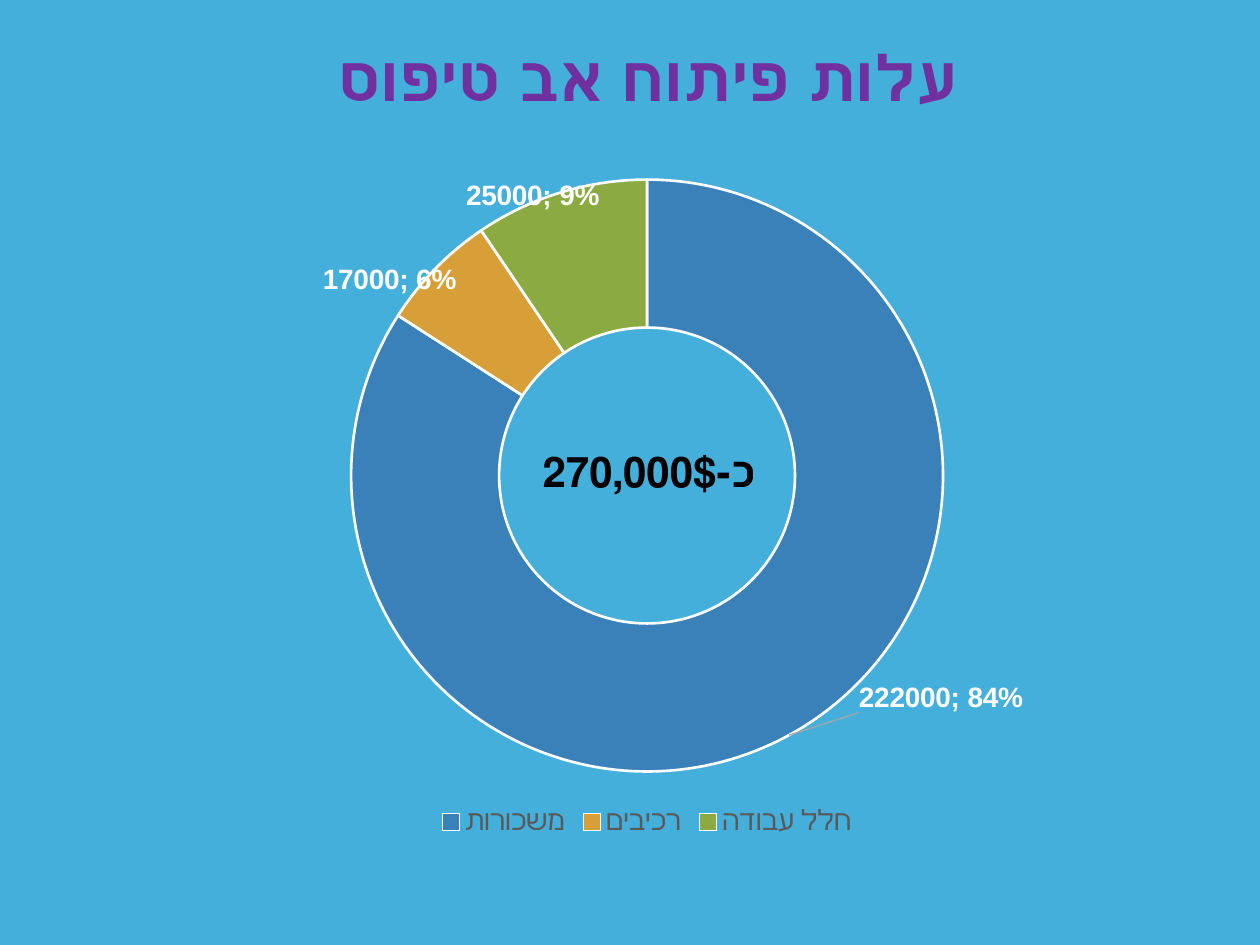
from lxml.etree import fromstring
from pptx import Presentation
from pptx.chart.data import CategoryChartData
from pptx.dml.color import RGBColor
from pptx.enum.chart import XL_CHART_TYPE as ChartType, XL_LEGEND_POSITION as LegendPosition
from pptx.enum.text import MSO_ANCHOR as Anchor, MSO_AUTO_SIZE as AutoSize, PP_ALIGN as Align
from pptx.oxml.ns import nsdecls, qn
from pptx.util import Cm, Pt

COLORS = {
    "background": "45AFDC", "title": "7030A0", "total": "000000", "label": "FFFFFF",
    "legend": "595959", "leader": "A6A6A6",
}
FONT = "Arial"
COSTS = [
    ("משכורות", 222000, "3A81BA", (0.19, 0.04)),
    ("רכיבים", 17000, "D89F39", (-0.1, -0.06)),
    ("חלל עבודה", 25000, "8BAB42", (-0.05, -0.1)),
]


def rgb(value):
    """Turn a hex string into a colour."""
    return RGBColor.from_string(value)


def style_font(font, size, color, bold=False):
    """Set the typeface, size, colour and weight of a font."""
    font.name, font.size, font.bold = FONT, Pt(size), bold
    font.color.rgb = rgb(color)


def fill_text(shape, box, text, size, color):
    """Place a shape in its box and give it one centred right-to-left line."""
    shape.left, shape.top, shape.width, shape.height = box
    frame = shape.text_frame
    frame.word_wrap = True
    frame.auto_size = AutoSize.SHAPE_TO_FIT_TEXT
    frame.vertical_anchor = Anchor.TOP
    para = frame.paragraphs[0]
    para.alignment = Align.CENTER
    para.line_spacing = 1.0
    para._p.get_or_add_pPr().set("rtl", "1")
    span = para.add_run()
    span.text = text
    style_font(span.font, size, color, bold=True)


def manual_layout(**settings):
    """Build a manual chart layout element from its settings."""
    parts = "".join(f'<c:{name} val="{value}"/>' for name, value in settings.items())
    return fromstring(
        f'<c:layout {nsdecls("c")}><c:manualLayout>{parts}</c:manualLayout></c:layout>'
    )


def show_value_and_percent(labels):
    """Make a label element show its value and percentage."""
    labels.find(qn("c:showVal")).set("val", "1")
    labels.find(qn("c:showPercent")).set("val", "1")
    separator = fromstring(f'<c:separator {nsdecls("c")}>; </c:separator>')
    labels.find(qn("c:showBubbleSize")).addnext(separator)


def style_slices(series):
    """Colour the slices and move their labels."""
    labels = series.data_labels
    style_font(labels.font, 16, COLORS["label"], bold=True)
    for index, (_, _, color, (x, y)) in enumerate(COSTS):
        point = series.points[index]
        point.format.fill.solid()
        point.format.fill.fore_color.rgb = rgb(color)
        point.format.line.color.rgb = rgb(COLORS["label"])
        point.format.line.width = Pt(1.5)
        style_font(point.data_label.font, 16, COLORS["label"], bold=True)
    group = series._element.find(qn("c:dLbls"))
    for label, cost in zip(group.findall(qn("c:dLbl")), COSTS):
        x, y = cost[3]
        label.find(qn("c:idx")).addnext(manual_layout(x=x, y=y))
        show_value_and_percent(label)
    show_value_and_percent(group)
    group.append(fromstring(
        f'<c:leaderLines {nsdecls("c", "a")}><c:spPr><a:ln w="9525"><a:solidFill>'
        f'<a:srgbClr val="{COLORS["leader"]}"/></a:solidFill></a:ln></c:spPr></c:leaderLines>'
    ))


def add_cost_chart(page, left, top, width, height):
    """Draw the cost doughnut with the total in its middle."""
    data = CategoryChartData()
    data.categories = [cost[0] for cost in COSTS]
    data.add_series("Series 1", [cost[1] for cost in COSTS])
    frame = page.shapes.add_chart(ChartType.DOUGHNUT, left, top, width, height, data)
    chart = frame.chart
    chart.has_title = False
    style_font(chart.font, 10, COLORS["total"])
    chart.has_legend = True
    chart.legend.position = LegendPosition.BOTTOM
    chart.legend.include_in_layout = False
    style_font(chart.legend.font, 16, COLORS["legend"])
    style_slices(chart.plots[0].series[0])

    area = chart._chartSpace.find(".//" + qn("c:plotArea"))
    for layout in area.findall(qn("c:layout")):
        area.remove(layout)
    area.insert(0, manual_layout(
        layoutTarget="inner", xMode="edge", yMode="edge", x=0.2, y=0.02, w=0.6, h=0.88
    ))
    area.find(".//" + qn("c:holeSize")).set("val", "75")

    box = (left + Cm(7.04), top + Cm(5.56), Cm(5.89), Cm(1.27))
    total = page.shapes.add_textbox(*box)
    fill_text(total, box, "כ-270,000$", 24, COLORS["total"])


def main():
    """Build and save the cost slide."""
    deck = Presentation()
    deck.slide_width, deck.slide_height = Cm(25.4), Cm(19.05)
    page = deck.slides.add_slide(deck.slide_layouts[5])
    page.background.fill.solid()
    page.background.fill.fore_color.rgb = rgb(COLORS["background"])
    title_box = (Cm(2.06), Cm(0.64), Cm(22), Cm(1.8))
    fill_text(page.shapes.title, title_box, "עלות פיתוח אב טיפוס", 36, COLORS["title"])
    add_cost_chart(page, Cm(3.1), Cm(3.3), Cm(19.89), Cm(13.67))
    deck.save("out.pptx")


if __name__ == "__main__":
    main()
